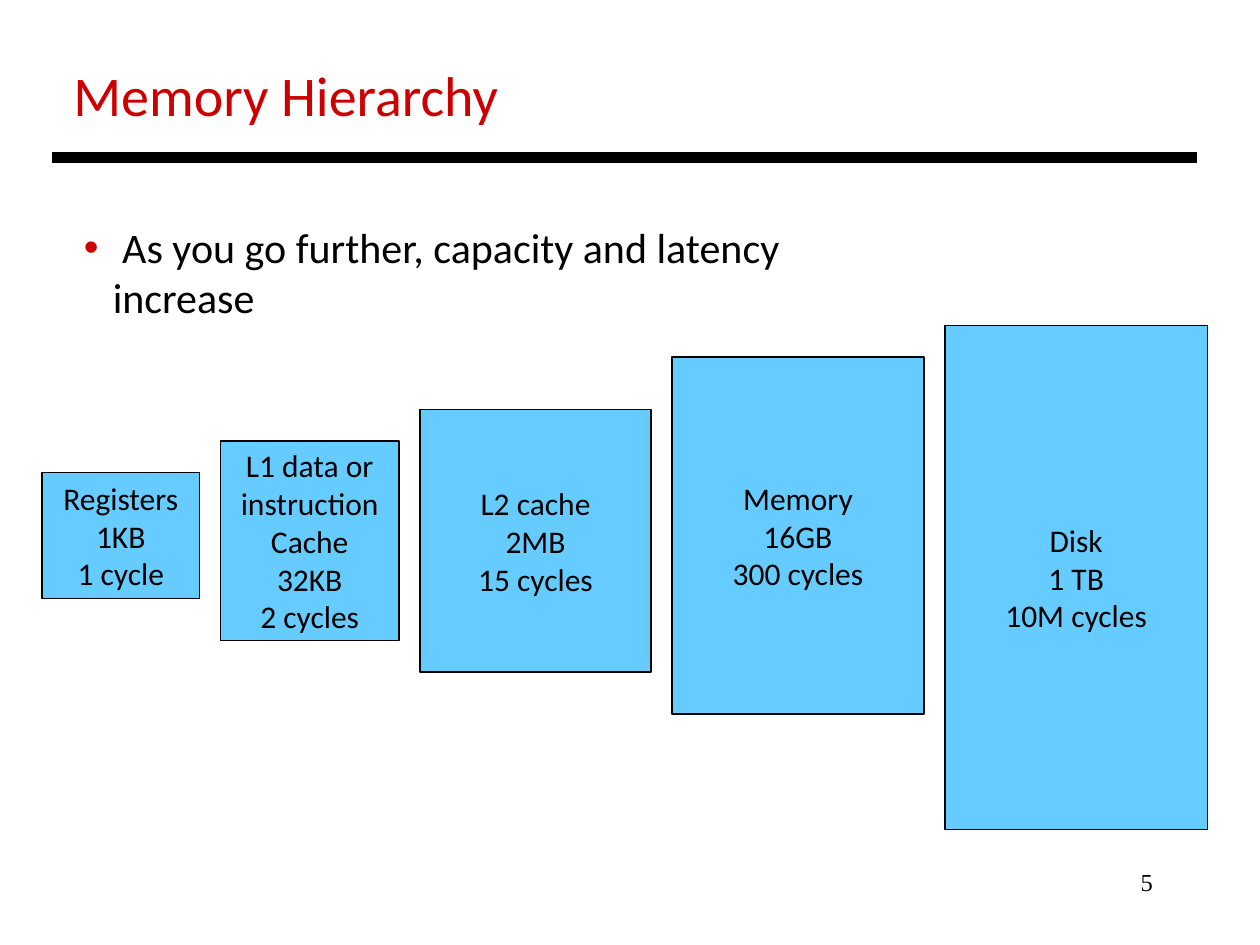
from lxml import etree
from pptx import Presentation
from pptx import util as u
from pptx.dml.color import RGBColor
from pptx.enum import shapes, text
from pptx.oxml.ns import qn

BLACK = RGBColor(0x00, 0x00, 0x00)
RED = RGBColor(0xCC, 0x00, 0x00)
BLUE = RGBColor(0x66, 0xCC, 0xFF)
COLS, ROWS = 120, 90


class Deck:
    """Style and current slide; lengths are columns and rows of a 120 x 90 grid."""

    font = "Calibri"

    def __init__(self):
        self.prs = Presentation()
        self.prs.slide_width, self.prs.slide_height = u.Inches(10), u.Inches(7.5)
        self.s = self.prs.slides.add_slide(self.prs.slide_layouts[6])

    def x(self, cols):
        return u.Emu(round(self.prs.slide_width * cols / COLS))

    def y(self, rows):
        return u.Emu(round(self.prs.slide_height * rows / ROWS))

    def place(self, col, row, width, height):
        return self.x(col), self.y(row), self.x(width), self.y(height)

    def add_lines(self, tf, lines, size, color=BLACK, align=text.PP_ALIGN.LEFT, font=None):
        for i, line in enumerate(lines):
            p = tf.paragraphs[0] if i == 0 else tf.add_paragraph()
            p.alignment = align
            r = p.add_run()
            r.text = line
            r.font.size, r.font.name = u.Pt(size), font or self.font
            r.font.color.rgb = color

    def label(self, at, line, size, wrap=False, **style):
        tf = self.s.shapes.add_textbox(*self.place(*at)).text_frame
        tf.word_wrap = wrap
        self.add_lines(tf, [line], size, **style)
        return tf

    def bullet(self, at, line, size):
        tf = self.label(at, line, size, wrap=True)
        pPr = tf.paragraphs[0]._p.get_or_add_pPr()
        indent = u.Inches(0.23)
        pPr.set("marL", str(indent))
        pPr.set("indent", str(-indent))
        color = etree.SubElement(pPr, qn("a:buClr"))
        etree.SubElement(color, qn("a:srgbClr")).set("val", str(RED))
        etree.SubElement(pPr, qn("a:buFont")).set("typeface", "Arial")
        etree.SubElement(pPr, qn("a:buChar")).set("char", "•")

    def rule(self, col, row, end_col, weight):
        c = self.s.shapes.add_connector(shapes.MSO_CONNECTOR.STRAIGHT, self.x(col),
                                        self.y(row), self.x(end_col), self.y(row))
        c.line.color.rgb, c.line.width = BLACK, u.Pt(weight)
        etree.SubElement(c._element.spPr, qn("a:effectLst"))

    def box(self, at, lines):
        sp = self.s.shapes.add_shape(shapes.MSO_SHAPE.RECTANGLE, *self.place(*at))
        sp.shadow.inherit = False
        sp.fill.solid()
        sp.fill.fore_color.rgb = BLUE
        sp.line.color.rgb, sp.line.width = BLACK, u.Pt(0.75)
        tf = sp.text_frame
        tf.word_wrap = False
        tf.vertical_anchor = text.MSO_ANCHOR.MIDDLE
        self.add_lines(tf, lines, 18, align=text.PP_ALIGN.CENTER)


def main():
    d = Deck()

    # Page number, title and rule
    d.label((86, 82, 25, 6), "5", 14, align=text.PP_ALIGN.RIGHT, font="Times New Roman")
    d.label((5.8, 5.2, 43.3, 7.7), "Memory Hierarchy", 32, color=RED)
    d.rule(5, 15, 114, 6)

    # Statement
    d.bullet((6.8, 20.5, 82, 10), " As you go further, capacity and latency increase", 24)

    # Memory levels, left to right: top row, width, height, lines
    levels = [
        (45, 15, 12, ["Registers", "1KB", "1 cycle"]),
        (42, 17, 19, ["L1 data or", "instruction", "Cache", "32KB", "2 cycles"]),
        (39, 22, 25, ["L2 cache", "2MB", "15 cycles"]),
        (34, 24, 34, ["Memory", "16GB", "300 cycles"]),
        (31, 25, 48, ["Disk", "1 TB", "10M cycles"]),
    ]
    col, gap = 4, 2
    for top, width, height, lines in levels:
        d.box((col, top, width, height), lines)
        col += width + gap

    d.prs.save("out.pptx")


if __name__ == "__main__":
    main()
